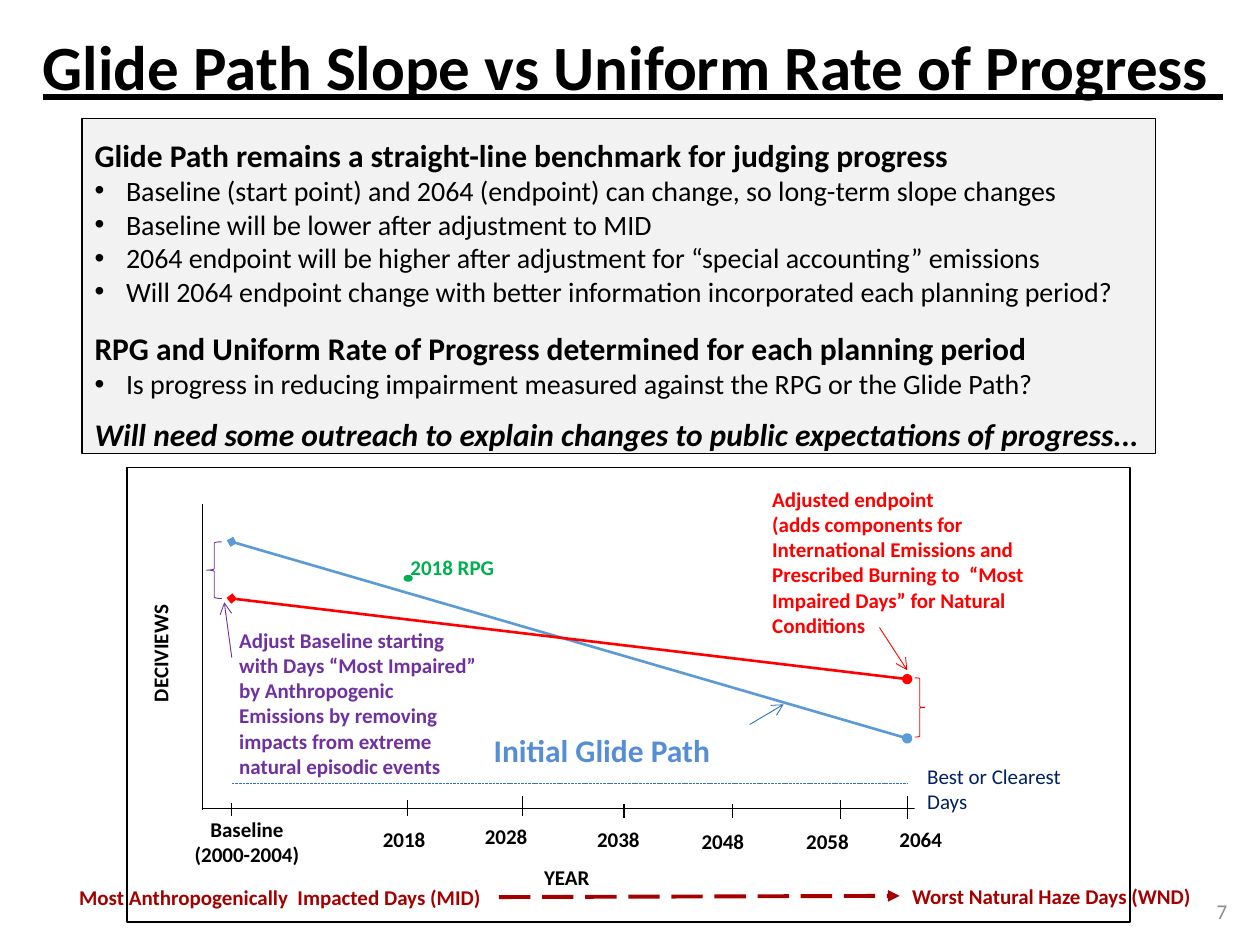
from lxml import etree
from pptx import Presentation
from pptx import util as u
from pptx.dml.color import RGBColor
from pptx.enum import dml, shapes, text
from pptx.oxml.ns import qn

COLORS = {
    "black": "000000", "white": "FFFFFF", "panel": "F2F2F2", "gray": "8C8C8C",
    "glide": "5B9BD5", "glide text": "558ED5", "blue": "2E75B6", "navy": "002060",
    "red": "FF0000", "dark red": "A40000", "green": "00B050", "purple": "7030A0",
}
RGB = {name: RGBColor.from_string(value) for name, value in COLORS.items()}
LEFT, CENTER, RIGHT = text.PP_ALIGN.LEFT, text.PP_ALIGN.CENTER, text.PP_ALIGN.RIGHT
NO_FIT = text.MSO_AUTO_SIZE.NONE


def write(para, words, color="black", size=12, bold=True, italic=False, **layout):
    """Add a formatted run and set the paragraph's layout values."""
    span = para.add_run()
    span.text = words
    values = {"name": "Calibri", "size": u.Pt(size), "bold": bold, "italic": italic}
    for name, value in values.items():
        setattr(span.font, name, value)
    span.font.color.rgb = RGB[color]
    for name, value in layout.items():
        setattr(para, name, value)
    return span


def draw_line(start, end, color="black", width=0.5, head=None, tail=None, dash=None):
    """Add a straight line with optional dash and arrowheads."""
    ends = [u.Inches(value) for value in (*start, *end)]
    line = chart.add_connector(shapes.MSO_CONNECTOR.STRAIGHT, *ends)
    line.line.color.rgb = RGB[color]
    line.line.width = u.Pt(width)
    if dash:
        line.line.dash_style = dash
    for tag, kind in (("a:headEnd", head), ("a:tailEnd", tail)):
        if kind:
            etree.SubElement(line.line._get_or_add_ln(), qn(tag), type=kind)
    etree.SubElement(line._element.spPr, qn("a:effectLst"))
    return line


deck = Presentation()
deck.slide_width, deck.slide_height = u.Inches(10), u.Inches(7.5)
page = deck.slides.add_slide(deck.slide_layouts[1])
title, body = page.placeholders

# Title
placements = [(title, (0.24, 0.2, 9.6, 0.71)), (body, (0.65, 0.94, 8.52, 2.66))]
for holder, place in placements:
    for name, value in zip(("left", "top", "width", "height"), place):
        setattr(holder, name, u.Inches(value))
    holder.text_frame.auto_size = NO_FIT
title.text_frame.vertical_anchor = text.MSO_ANCHOR.MIDDLE
heading = write(title.text_frame.paragraphs[0],
                "Glide Path Slope vs Uniform Rate of Progress ",
                size=36, alignment=LEFT, line_spacing=0.9)
heading.font.underline = True

# Key points
body.fill.solid()
body.fill.fore_color.rgb = RGB["panel"]
body.line.color.rgb = RGB["black"]
body.line.width = u.Pt(0.75)
frame_format = {"vertical_anchor": text.MSO_ANCHOR.BOTTOM, "margin_top": 0,
                "margin_bottom": 0, "word_wrap": True}
for name, value in frame_format.items():
    setattr(body.text_frame, name, value)

styles = {
    "heading": {"size": 18, "line_spacing": 1.0},
    "bullet": {"size": 16, "bold": False, "line_spacing": 1.0},
    "closing": {"size": 18, "italic": True, "line_spacing": 0.9},
}
points = [
    ("heading", 0, "Glide Path remains a straight-line benchmark for judging progress"),
    ("bullet", 0, "Baseline (start point) and 2064 (endpoint) can change, so long-term slope changes"),
    ("bullet", 0, "Baseline will be lower after adjustment to MID"),
    ("bullet", 0, "2064 endpoint will be higher after adjustment for “special accounting” emissions"),
    ("bullet", 0, "Will 2064 endpoint change with better information incorporated each planning period?"),
    ("heading", 12, "RPG and Uniform Rate of Progress determined for each planning period"),
    ("bullet", 0, "Is progress in reducing impairment measured against the RPG or the Glide Path?"),
    ("closing", 11, "Will need some outreach to explain changes to public expectations of progress..."),
]
for index, (style, gap, words) in enumerate(points):
    para = body.text_frame.add_paragraph() if index else body.text_frame.paragraphs[0]
    write(para, words, alignment=LEFT, space_before=u.Pt(gap), space_after=u.Pt(0),
          **styles[style])
    props = para._p.get_or_add_pPr()
    indent = u.Inches(0.25) if style == "bullet" else 0
    props.set("marL", str(indent))
    props.set("indent", str(-indent))
    if indent:
        etree.SubElement(props, qn("a:buFont"), typeface="Arial")
        etree.SubElement(props, qn("a:buChar"), char="•")
    else:
        etree.SubElement(props, qn("a:buNone"))

# Page number
box = page.shapes.add_textbox(*map(u.Inches, (9.5, 7.11, 0.34, 0.24)))
box.text_frame.vertical_anchor = text.MSO_ANCHOR.MIDDLE
write(box.text_frame.paragraphs[0], "7", "gray", bold=False, alignment=RIGHT)

# Diagram frame and axes
chart = page.shapes.add_group_shape().shapes
frame = chart.add_shape(shapes.MSO_SHAPE.RECTANGLE, *map(u.Inches, (1.01, 3.71, 7.96, 3.61)))
frame.shadow.inherit = False
frame.fill.solid()
frame.fill.fore_color.rgb = RGB["white"]
frame.line.color.rgb = RGB["black"]
frame.line.width = u.Pt(1)
draw_line((1.61, 4), (1.61, 6.44))
draw_line((1.6, 6.42), (8.22, 6.42))

# Labels: words, place, color, filled, format
labels = [
    ("Baseline\n(2000-2004)", (1.37, 6.43, 1.18, 0.58), "black", True, {"alignment": CENTER}),
    ("2018", (2.94, 6.51, 0.83, 0.37), "black", True, {}),
    ("2028", (3.75, 6.49, 0.8, 0.37), "black", True, {}),
    ("2038", (4.64, 6.51, 0.67, 0.37), "black", True, {}),
    ("2048", (5.47, 6.53, 0.8, 0.37), "black", True, {}),
    ("2058", (6.3, 6.53, 0.67, 0.37), "black", True, {}),
    ("2064", (7.04, 6.51, 0.84, 0.37), "black", True, {}),
    ("YEAR", (4.22, 6.81, 0.98, 0.29), "black", True, {}),
    ("DECIVIEWS", (1.12, 4.59, 0.47, 1.08), "black", True, {}),
    ("Initial Glide Path", (3.82, 5.75, 2.59, 0.33), "glide text", True, {"size": 18}),
    ("Adjusted endpoint\n(adds components for International Emissions and Prescribed "
     "Burning to  “Most Impaired Days” for Natural Conditions",
     (6.03, 3.81, 2.62, 1.12), "red", True, {}),
    ("2018 RPG", (3.16, 4.35, 1.13, 0.27), "green", True,
     {"alignment": text.PP_ALIGN.JUSTIFY}),
    ("Adjust Baseline starting with Days “Most Impaired” by Anthropogenic Emissions "
     "by removing impacts from extreme natural episodic events",
     (1.8, 4.93, 2.1, 1.59), "purple", False, {}),
    ("Best or Clearest Days", (7.26, 6.01, 1.41, 0.48), "navy", True, {"bold": False}),
    ("Most Anthropogenically  Impacted Days (MID)", (0.53, 6.97, 3.43, 0.3),
     "dark red", False, {}),
    ("Worst Natural Haze Days (WND)", (7.14, 6.96, 2.44, 0.3), "dark red", False, {}),
]
boxes = {}
for words, place, color, filled, style in labels:
    box = boxes[words] = chart.add_textbox(*map(u.Inches, place))
    box.text_frame.word_wrap = color != "dark red"
    box.text_frame.auto_size = NO_FIT
    if filled:
        box.fill.solid()
        box.fill.fore_color.rgb = RGB["white"]
    for index, part in enumerate(words.split("\n")):
        para = box.text_frame.add_paragraph() if index else box.text_frame.paragraphs[0]
        write(para, part, color, **style)
boxes["DECIVIEWS"].text_frame._txBody.bodyPr.set("vert", "vert270")

# Year ticks: x, top, bottom, width
ticks = [(1.84, 6.37, 6.48, 0.5), (3.23, 6.35, 6.48, 0.5), (4.15, 6.32, 6.48, 0.5),
         (4.95, 6.38, 6.49, 1), (5.81, 6.38, 6.49, 0.5), (6.67, 6.35, 6.5, 0.5),
         (7.2, 6.32, 6.5, 0.5)]
for x, top, bottom, width in ticks:
    draw_line((x, top), (x, bottom), width=width)

# Glide paths, clearest days and callout arrows
draw_line((1.84, 4.3), (7.2, 5.86), "glide", 1.5, "diamond", "oval")
draw_line((1.84, 4.75), (7.2, 5.39), "red", 1.5, "diamond", "oval")
draw_line((1.84, 6.22), (7.2, 6.22), "blue", dash=dml.MSO_LINE.SQUARE_DOT)
draw_line((5.95, 5.75), (6.22, 5.59), "blue", tail="arrow")
draw_line((6.98, 4.98), (7.2, 5.32), "red", tail="arrow")
draw_line((1.84, 5.22), (1.78, 4.78), "purple", tail="arrow")

# RPG point and braces
marks = [
    (shapes.MSO_SHAPE.FLOWCHART_CONNECTOR, (3.21, 4.57, 0.06, 0.04), "green", "green", 1),
    (shapes.MSO_SHAPE.RIGHT_BRACE, (7.26, 5.38, 0.08, 0.47), "white", "red", 0.5),
    (shapes.MSO_SHAPE.LEFT_BRACE, (1.64, 4.3, 0.12, 0.45), "white", "purple", 0.5),
]
for kind, place, fill, color, width in marks:
    mark = chart.add_shape(kind, *map(u.Inches, place))
    mark.shadow.inherit = False
    mark.fill.solid()
    mark.fill.fore_color.rgb = RGB[fill]
    mark.line.color.rgb = RGB[color]
    mark.line.width = u.Pt(width)

# Arrow from impacted days to natural haze days
arrow = draw_line((3.96, 7.11), (7.14, 7.11), "dark red", 2.25, tail="triangle",
                  dash=dml.MSO_LINE.LONG_DASH)
arrow.begin_connect(boxes["Most Anthropogenically  Impacted Days (MID)"], 3)
arrow.end_connect(boxes["Worst Natural Haze Days (WND)"], 1)

deck.save("out.pptx")
